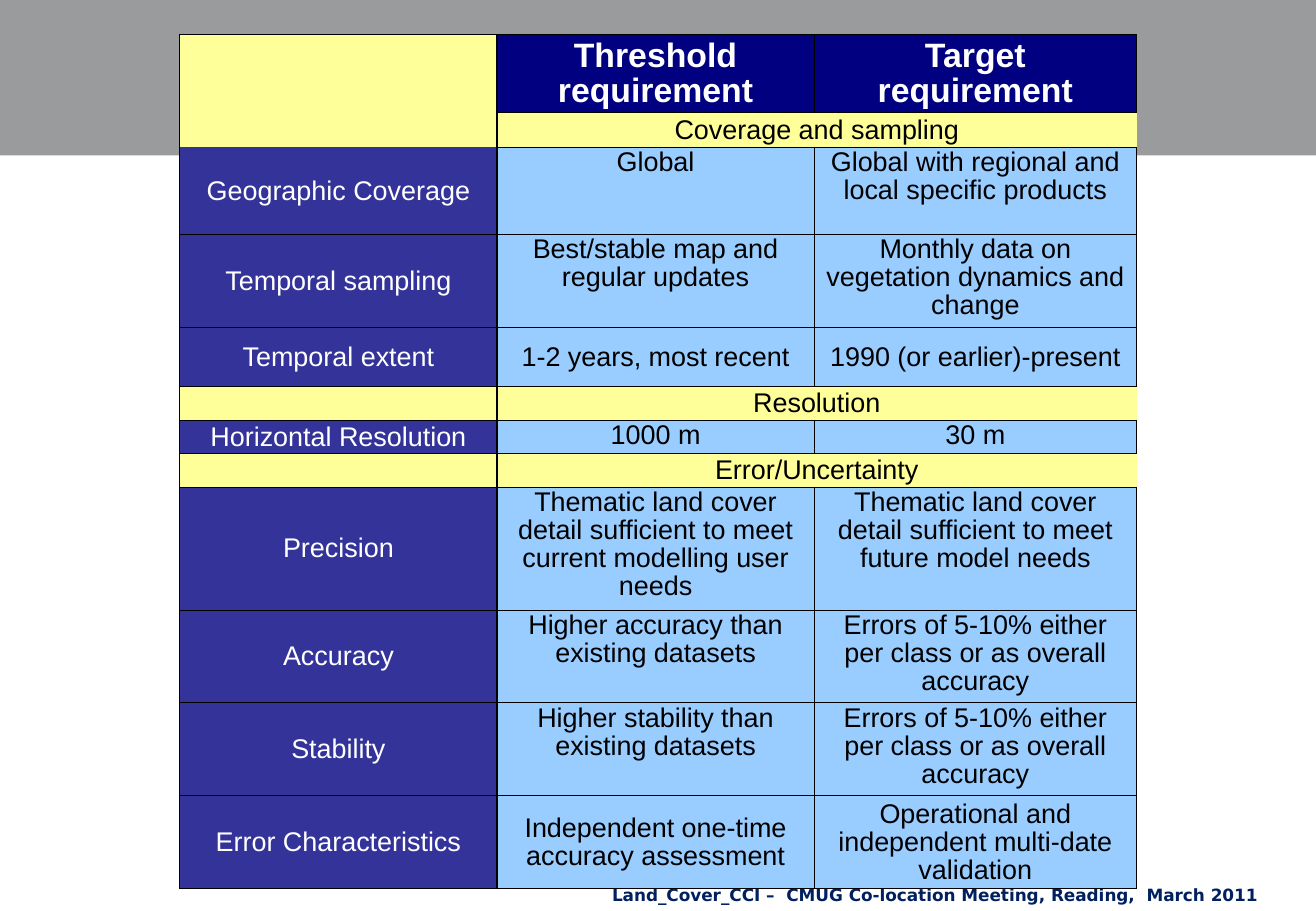
from dataclasses import dataclass
from pptx import Presentation
from pptx.dml.color import RGBColor
from pptx.enum.shapes import MSO_SHAPE
from pptx.enum.text import MSO_ANCHOR, MSO_AUTO_SIZE, PP_ALIGN
from pptx.oxml.ns import qn
from pptx.util import Inches, Pt
from lxml.etree import SubElement


@dataclass(frozen=True)
class Theme:
    band: str = "9A9B9C"
    head: str = "000080"
    label: str = "333399"
    body: str = "99CCFF"
    title: str = "FFFF99"
    white: str = "FFFFFF"
    black: str = "000000"
    navy: str = "002060"
    font: str = "Arial"
    foot: str = "DejaVu Sans"
    big: int = 20
    mid: int = 16
    small: int = 10


T = Theme()
WIDE, HIGH = Inches(10.83), Inches(7.5)
NO_GRID = "{2D5ABB26-0587-4C30-8999-92F81FD0307C}"

# Row height in percent of the slide, then the cells; None is merged away
ROWS = [
    (8.45, "", "Threshold requirement", "Target\nrequirement"),
    (3.84, None, "Coverage and sampling", None),
    (9.55, "Geographic Coverage", "Global",
     "Global with regional and local specific products"),
    (10.2, "Temporal sampling", "Best/stable map and regular updates",
     "Monthly data on vegetation dynamics and change"),
    (6.48, "Temporal extent", "1-2 years, most recent",
     "1990 (or earlier)-present"),
    (3.73, "", "Resolution", None),
    (3.62, "Horizontal Resolution", "1000 m", "30 m"),
    (3.73, "", "Error/Uncertainty", None),
    (13.5, "Precision",
     "Thematic land cover detail sufficient to meet current modelling user needs",
     "Thematic land cover detail sufficient to meet future model needs"),
    (10.1, "Accuracy", "Higher accuracy than existing datasets",
     "Errors of 5-10% either per class or as overall accuracy"),
    (10.2, "Stability", "Higher stability than existing datasets",
     "Errors of 5-10% either per class or as overall accuracy"),
    (10.1, "Error Characteristics", "Independent one-time accuracy assessment",
     "Operational and independent multi-date validation"),
]
COLS = (24.1, 24.1, 24.5)
TITLES = (1, 5, 7)
MIDDLE = (4, 11)            # body rows with centred text
HEAVY = (0, 1, 2, 5, 12)    # row edges with the thicker line


def color(code):
    return RGBColor.from_string(code)


def place(x, y, w, h):
    """Percent of the slide to lengths."""
    return [int(n * full / 100) for n, full in zip((x, y, w, h), (WIDE, HIGH) * 2)]


def style(item, **values):
    for name, value in values.items():
        setattr(item, name, value)


def block(slide, area, fill):
    box = slide.shapes.add_shape(MSO_SHAPE.RECTANGLE, *place(*area))
    box.shadow.inherit = False
    box.fill.solid()
    box.fill.fore_color.rgb = color(fill)
    box.line.fill.background()
    return box


def footer(slide, text):
    box = block(slide, (45.6, 96.4, 51.6, 3.6), T.white)
    frame = box.text_frame
    style(frame, text=text, word_wrap=False, vertical_anchor=MSO_ANCHOR.TOP,
          auto_size=MSO_AUTO_SIZE.SHAPE_TO_FIT_TEXT)
    line = frame.paragraphs[0]
    line.alignment = PP_ALIGN.LEFT
    style(line.font, name=T.foot, size=Pt(T.small), bold=True)
    line.font.color.rgb = color(T.navy)


def look(row, col):
    """Fill, text colour and size of a cell."""
    if row in TITLES or (row, col) == (0, 0):
        return T.title, T.black, T.mid
    if row == 0:
        return T.head, T.white, T.big
    return (T.label, T.white, T.mid) if col == 0 else (T.body, T.black, T.mid)


def sides(row, col):
    """Edges that carry a line."""
    if ROWS[row][col + 1] is None:
        return ""
    if (row, col) == (0, 0):
        return "LRT"
    if row in TITLES and col == 1:
        return "TB" if row == 1 else "LTB"
    bare = (row - 1 in TITLES and col == 2) or (row, col) == (2, 0)
    return "LRB" if bare else "LRTB"


def border(cell, row, col):
    props = cell._tc.get_or_add_tcPr()
    for side in "LRTB":
        line = SubElement(props, qn("a:ln" + side))
        if side not in sides(row, col):
            SubElement(line, qn("a:noFill"))
            continue
        edge = {"T": row, "B": row + 1}.get(side, 0)
        line.set("w", str(Pt(0.75 if edge in HEAVY else 0.45)))
        SubElement(SubElement(line, qn("a:solidFill")), qn("a:srgbClr"), val=T.black)


def write(cell, row, col):
    fill, ink, size = look(row, col)
    mid = col == 0 or row == 0 or row in TITLES or row in MIDDLE
    style(cell, text=ROWS[row][col + 1] or "",
          vertical_anchor=MSO_ANCHOR.MIDDLE if mid else MSO_ANCHOR.TOP,
          margin_left=Inches(0.07), margin_right=Inches(0.07),
          margin_top=Inches(0.02), margin_bottom=0)
    border(cell, row, col)
    cell.fill.solid()
    cell.fill.fore_color.rgb = color(fill)
    for line in cell.text_frame.paragraphs:
        style(line, alignment=PP_ALIGN.CENTER, line_spacing=0.93)
        for run in line.runs:
            style(run.font, name=T.font, size=Pt(size), bold=row == 0)
            run.font.color.rgb = color(ink)
        if not line.runs:
            SubElement(line._p, qn("a:endParaRPr"), sz=str(T.small * 100))


def grid(slide):
    area = place(13.67, 3.78, sum(COLS), sum(row[0] for row in ROWS))
    table = slide.shapes.add_table(len(ROWS), len(COLS), *area).table
    style(table, first_row=False, horz_banding=False)
    table._tbl.tblPr.find(qn("a:tableStyleId")).text = NO_GRID
    for col, share in zip(table.columns, COLS):
        col.width = int(WIDE * share / 100)
    for row, data in zip(table.rows, ROWS):
        row.height = int(HIGH * data[0] / 100)
    for row in range(len(ROWS)):
        for col in range(len(COLS)):
            write(table.cell(row, col), row, col)
    # Corner and section titles
    table.cell(0, 0).merge(table.cell(1, 0))
    for row in TITLES:
        table.cell(row, 1).merge(table.cell(row, 2))


def main():
    deck = Presentation()
    style(deck, slide_width=WIDE, slide_height=HIGH)
    slide = deck.slides.add_slide(deck.slide_layouts[6])
    # Top band and footer
    block(slide, (0, 0, 100, 17.07), T.band)
    footer(slide, "Land_Cover_CCI –  CMUG Co-location Meeting, Reading,  March 2011")
    # Requirements table
    grid(slide)
    deck.save("out.pptx")


if __name__ == "__main__":
    main()
